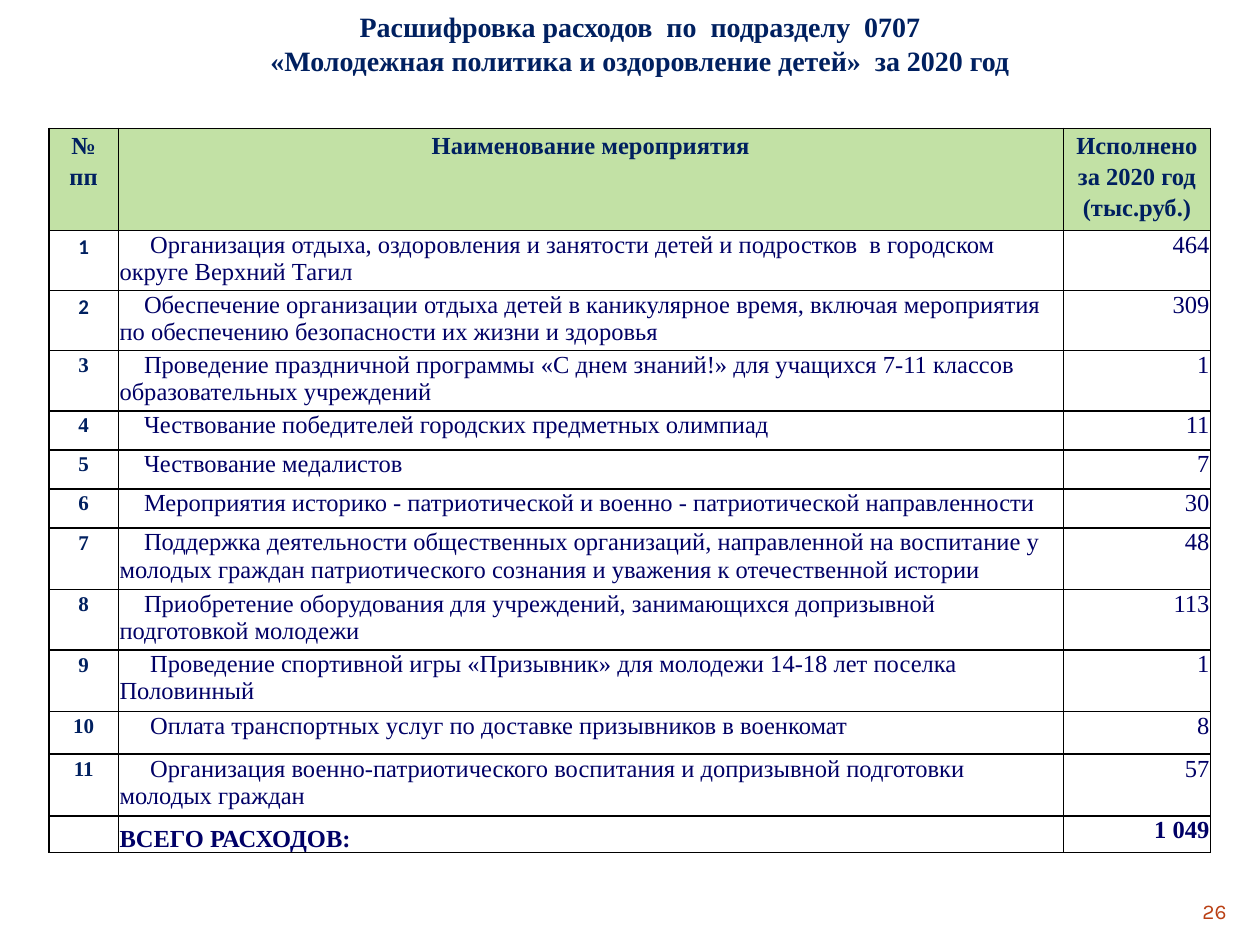
from dataclasses import dataclass

from lxml.etree import SubElement
from pptx import Presentation
from pptx.dml.color import RGBColor
from pptx.enum.text import MSO_ANCHOR, MSO_AUTO_SIZE, PP_ALIGN
from pptx.oxml.ns import qn
from pptx.util import Pt


@dataclass(frozen=True)
class Theme:
    heading: str = "002060"
    body: str = "000066"
    header_fill: str = "C2E1A5"
    border: str = "000000"
    page_number: str = "BA4014"
    serif: str = "Times New Roman"
    sans: str = "Calibri"
    page_font: str = "Karla"
    title_size: int = 16
    body_size: int = 14
    small_size: int = 12


THEME = Theme()

TITLE = ("Расшифровка расходов  по  подразделу  0707\n"
         "«Молодежная политика и оздоровление детей»  за 2020 год")
HEADERS = ["№\nпп", "Наименование мероприятия", "Исполнено\nза 2020 год\n(тыс.руб.)"]
NARROW_INDENT, WIDE_INDENT = 14, 17.5
# name, amount, first-line indent, row height
ACTIVITIES = [
    ("Организация отдыха, оздоровления и занятости детей и подростков  в городском "
     "округе Верхний Тагил", "464", WIDE_INDENT, 34.4),
    ("Обеспечение организации отдыха детей в каникулярное время, включая мероприятия "
     "по обеспечению безопасности их жизни и здоровья", "309", NARROW_INDENT, 34.4),
    ("Проведение праздничной программы «С днем знаний!» для учащихся 7-11 классов "
     "образовательных учреждений", "1", NARROW_INDENT, 34.4),
    ("Чествование победителей городских предметных олимпиад", "11", NARROW_INDENT, 22.3),
    ("Чествование медалистов", "7", NARROW_INDENT, 22.3),
    ("Мероприятия историко - патриотической и военно - патриотической направленности",
     "30", NARROW_INDENT, 22.4),
    ("Поддержка деятельности общественных организаций, направленной на воспитание у "
     "молодых граждан патриотического сознания и уважения к отечественной истории",
     "48", NARROW_INDENT, 35.3),
    ("Приобретение оборудования для учреждений, занимающихся допризывной "
     "подготовкой молодежи", "113", NARROW_INDENT, 34.4),
    ("Проведение спортивной игры «Призывник» для молодежи 14-18 лет поселка "
     "Половинный", "1", WIDE_INDENT, 35.3),
    ("Оплата транспортных услуг по доставке призывников в военкомат", "8",
     WIDE_INDENT, 24.3),
    ("Организация военно-патриотического воспитания и допризывной подготовки "
     "молодых граждан", "57", WIDE_INDENT, 35.3),
]
TOTAL_LABEL, TOTAL_AMOUNT = "ВСЕГО РАСХОДОВ:", "1 049"
HEADER_HEIGHT, TOTAL_HEIGHT = 58.3, 21
COLUMN_WIDTHS = [39.6, 540, 84.2]


def format_text(text_frame, size, color, font=THEME.serif, bold=False,
                align=PP_ALIGN.LEFT, line_spacing=1.0):
    for paragraph in text_frame.paragraphs:
        paragraph.alignment = align
        paragraph.line_spacing = line_spacing
        for run in paragraph.runs:
            run.font.name = font
            run.font.size = Pt(size)
            run.font.bold = bold
            run.font.color.rgb = RGBColor.from_string(color)


def set_margins(target, left, top, right, bottom):
    target.margin_left, target.margin_top = Pt(left), Pt(top)
    target.margin_right, target.margin_bottom = Pt(right), Pt(bottom)


def set_borders(cell):
    properties = cell._tc.get_or_add_tcPr()
    for position, side in enumerate(("a:lnL", "a:lnR", "a:lnT", "a:lnB")):
        line = SubElement(properties, qn(side), w=str(Pt(1)))
        fill = SubElement(line, qn("a:solidFill"))
        SubElement(fill, qn("a:srgbClr"), val=THEME.border)
        properties.insert(position, line)


def fill_cell(cell, text, fill=None, margins=(0.7, 0.7, 0.7, 0), indent=0, **style):
    cell.text_frame.text = text
    set_margins(cell, *margins)
    if fill:
        cell.fill.solid()
        cell.fill.fore_color.rgb = RGBColor.from_string(fill)
    else:
        cell.fill.background()
    set_borders(cell)
    format_text(cell.text_frame, **style)
    paragraph = cell.text_frame.paragraphs[0]
    if indent:
        paragraph._p.get_or_add_pPr().set("indent", str(Pt(indent)))
    if not text:
        SubElement(paragraph._p, qn("a:endParaRPr"), sz=str(THEME.small_size * 100))


def place_title(slide, left, top, width, height):
    title = slide.shapes.title
    title.left, title.top, title.width, title.height = map(Pt, (left, top, width, height))
    text_frame = title.text_frame
    text_frame.text = TITLE
    text_frame.word_wrap = True
    text_frame.auto_size = MSO_AUTO_SIZE.NONE
    text_frame.vertical_anchor = MSO_ANCHOR.TOP
    set_margins(text_frame, 7.2, 5.5, 7.2, 3.6)
    format_text(text_frame, THEME.title_size, THEME.heading, bold=True,
                align=PP_ALIGN.CENTER)


def place_expense_table(slide, left, top):
    heights = [HEADER_HEIGHT, *(activity[3] for activity in ACTIVITIES), TOTAL_HEIGHT]
    table = slide.shapes.add_table(
        len(heights), len(COLUMN_WIDTHS), Pt(left), Pt(top),
        Pt(sum(COLUMN_WIDTHS)), Pt(sum(heights))).table
    for column, width in zip(table.columns, COLUMN_WIDTHS):
        column.width = Pt(width)
    for row, height in zip(table.rows, heights):
        row.height = Pt(height)

    heading = dict(margins=(2.9, 0, 2.9, 0), color=THEME.heading, bold=True,
                   align=PP_ALIGN.CENTER, line_spacing=1.15)
    body = dict(size=THEME.body_size, color=THEME.body)
    for column, text in enumerate(HEADERS):
        fill_cell(table.cell(0, column), text, fill=THEME.header_fill,
                  size=THEME.body_size, **heading)
    for row, (name, amount, indent, _) in enumerate(ACTIVITIES, start=1):
        font = THEME.sans if row <= 2 else THEME.serif
        fill_cell(table.cell(row, 0), str(row), size=THEME.small_size, font=font, **heading)
        fill_cell(table.cell(row, 1), name, indent=indent, **body)
        fill_cell(table.cell(row, 2), amount, align=PP_ALIGN.RIGHT, **body)

    last = len(heights) - 1
    fill_cell(table.cell(last, 0), "", size=THEME.small_size, **heading)
    fill_cell(table.cell(last, 1), TOTAL_LABEL, bold=True, **body)
    table.cell(last, 1).vertical_anchor = MSO_ANCHOR.BOTTOM
    fill_cell(table.cell(last, 2), TOTAL_AMOUNT, bold=True, align=PP_ALIGN.RIGHT, **body)


def place_page_number(slide, left, top, width, height):
    text_frame = slide.shapes.add_textbox(*map(Pt, (left, top, width, height))).text_frame
    text_frame.word_wrap = True
    text_frame.text = "26"
    format_text(text_frame, THEME.small_size, THEME.page_number, THEME.page_font,
                align=PP_ALIGN.RIGHT)


def main():
    presentation = Presentation()
    presentation.slide_width, presentation.slide_height = Pt(720), Pt(540)
    slide = presentation.slides.add_slide(presentation.slide_layouts[5])
    place_page_number(slide, 648, 510, 60, 19.4)
    place_title(slide, 28, 0, 675.4, 100.8)
    place_expense_table(slide, 28, 73.3)
    presentation.save("out.pptx")


if __name__ == "__main__":
    main()
